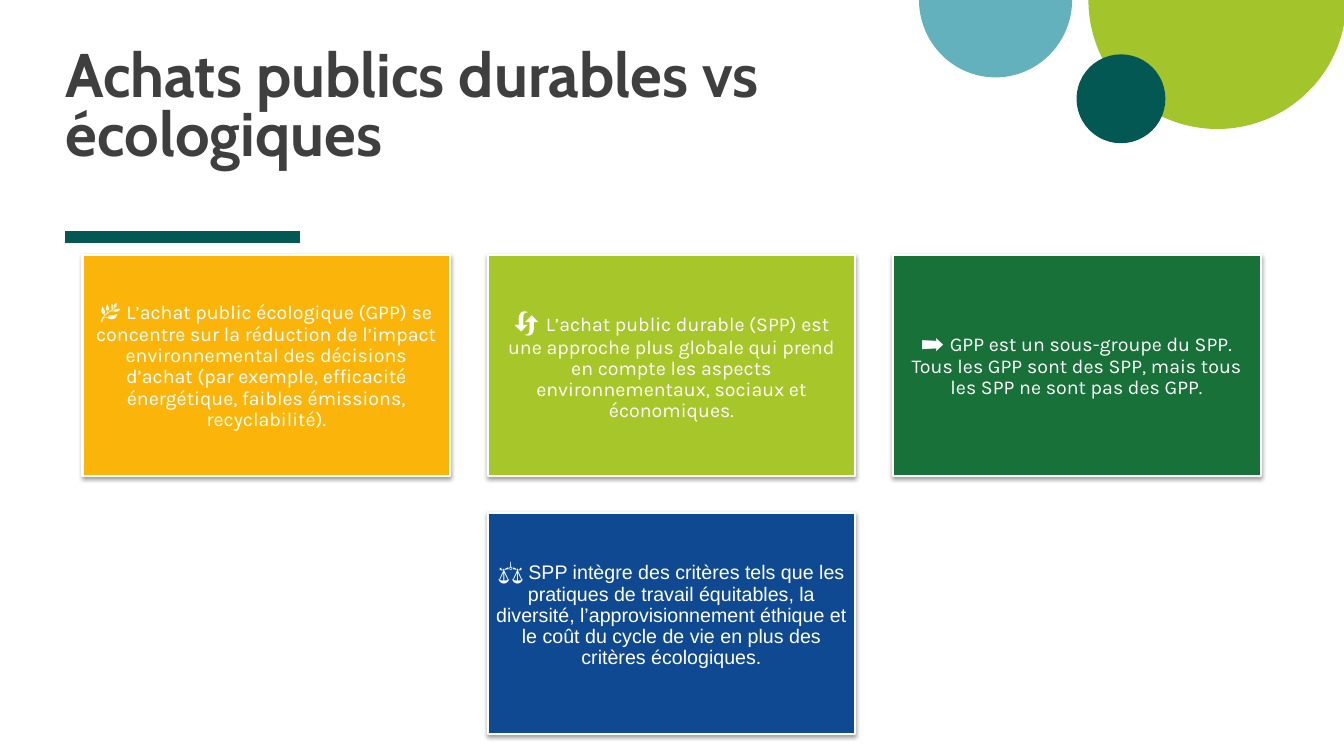
from lxml import etree
from pptx import Presentation
from pptx.dml.color import RGBColor
from pptx.enum import shapes, text
from pptx.oxml import parse_xml
from pptx.oxml.ns import qn
from pptx.util import Cm, Pt

WHITE = RGBColor(0xFF, 0xFF, 0xFF)
GREY = RGBColor(0x3F, 0x3F, 0x3F)
TEAL = RGBColor(0x03, 0x58, 0x54)
LEAF = RGBColor(0xA3, 0xC4, 0x2A)
AQUA = RGBColor(0x64, 0xB1, 0xBE)
AMBER = RGBColor(0xFB, 0xB5, 0x0A)
LIME = RGBColor(0xA6, 0xC6, 0x2A)
GREEN = RGBColor(0x18, 0x71, 0x38)
BLUE = RGBColor(0x0F, 0x49, 0x91)

TITLE = "Achats publics durables vs écologiques"
# column, row, fill, icon, icon size, text, font, bottom inset (cm)
CARDS = [
    (0, 0, AMBER, "🌿 ", 16,
     "L’achat public écologique (GPP) se concentre sur la réduction de l’impact "
     "environnemental des décisions d’achat (par exemple, efficacité énergétique, "
     "faibles émissions, recyclabilité).", "Karla", 0.2),
    (1, 0, LIME, "🔄 ", 19,
     "L’achat public durable (SPP) est une approche plus globale qui prend en compte "
     "les aspects environnementaux, sociaux et économiques.", "Karla", 0.2),
    (2, 0, GREEN, "➡️ ", 16,
     "GPP est un sous-groupe du SPP. Tous les GPP sont des SPP, mais tous les SPP "
     "ne sont pas des GPP.", "Karla", 0.2),
    (1, 1, BLUE, "⚖️ ", 16,
     "SPP intègre des critères tels que les pratiques de travail équitables, la "
     "diversité, l’approvisionnement éthique et le coût du cycle de vie en plus des "
     "critères écologiques.", "Arial", 0.64),
]
# preset, left, top, width, height (cm), fill
CIRCLES = [
    (shapes.MSO_SHAPE.PIE, 27.43, -3.25, 6.5, 6.5, LEAF),
    (shapes.MSO_SHAPE.PIE, 23.16, -1.96, 3.86, 3.91, AQUA),
    (shapes.MSO_SHAPE.OVAL, 27.13, 1.37, 2.24, 2.24, TEAL),
]
LEFT, TOP = 2.08, 6.43
CARD_W, CARD_H = 9.27, 5.56
STEP_X, STEP_Y = 10.21, 6.5
HALF_TURN = 108  # 180 degrees in the units of the pie adjustment
SHADOW = (
    '<a:effectLst xmlns:a="http://schemas.openxmlformats.org/drawingml/2006/main">'
    '<a:outerShdw blurRad="40000" dist="20000" dir="5400000" rotWithShape="0">'
    '<a:srgbClr val="000000"><a:alpha val="37000"/></a:srgbClr>'
    '</a:outerShdw></a:effectLst>')


def add_filled(slide, preset, left, top, width, height, fill):
    sp = slide.shapes.add_shape(preset, Cm(left), Cm(top), Cm(width), Cm(height))
    sp.fill.solid()
    sp.fill.fore_color.rgb = fill
    return sp


def add_circle(slide, preset, *place_and_fill):
    sp = add_filled(slide, preset, *place_and_fill)
    sp.shadow.inherit = False
    sp.line.fill.background()
    if preset == shapes.MSO_SHAPE.PIE:
        sp.adjustments[0] = 0
        sp.adjustments[1] = HALF_TURN


def add_rule(slide):
    line = slide.shapes.add_connector(
        shapes.MSO_CONNECTOR.STRAIGHT, Cm(1.65), Cm(5.97), Cm(7.57), Cm(5.97))
    line.line.color.rgb = TEAL
    line.line.width = Pt(8)
    etree.SubElement(line._element.spPr, qn("a:effectLst"))


def set_title(slide):
    title = slide.shapes.title
    title.left, title.top, title.width, title.height = Cm(1.65), Cm(0.56), Cm(23.57), Cm(4.37)
    tf = title.text_frame
    tf.text = TITLE
    tf.word_wrap = True
    tf.auto_size = text.MSO_AUTO_SIZE.NONE
    tf.vertical_anchor = text.MSO_ANCHOR.MIDDLE
    tf.margin_left = tf.margin_right = tf.margin_top = tf.margin_bottom = 0
    p = tf.paragraphs[0]
    p.alignment = text.PP_ALIGN.LEFT
    p.line_spacing = 0.8
    p.font.name, p.font.size, p.font.bold = "Cabin", Pt(44), True
    p.font.color.rgb = GREY


def add_card(slide, col, row, fill, icon, icon_size, body, font, bottom):
    sp = add_filled(slide, shapes.MSO_SHAPE.RECTANGLE, LEFT + col * STEP_X,
                    TOP + row * STEP_Y, CARD_W, CARD_H, fill)
    sp.line.color.rgb = WHITE
    sp.line.width = Pt(1.5)
    sp._element.spPr.append(parse_xml(SHADOW))
    tf = sp.text_frame
    tf.word_wrap = True
    tf.vertical_anchor = text.MSO_ANCHOR.MIDDLE
    tf.margin_left = tf.margin_right = tf.margin_top = Cm(0.2)
    tf.margin_bottom = Cm(bottom)
    p = tf.paragraphs[0]
    p.alignment = text.PP_ALIGN.CENTER
    p.line_spacing = 0.9
    for words, size, name in ((icon, icon_size, "Karla"), (body, 14, font)):
        r = p.add_run()
        r.text = words
        r.font.name, r.font.size = name, Pt(size)
        r.font.color.rgb = WHITE


def main():
    prs = Presentation()
    prs.slide_width, prs.slide_height = Cm(33.87), Cm(19.05)
    slide = prs.slides.add_slide(prs.slide_layouts[5])
    set_title(slide)
    add_rule(slide)
    for circle in CIRCLES:
        add_circle(slide, *circle)
    for card in CARDS:
        add_card(slide, *card)
    prs.save("out.pptx")


if __name__ == "__main__":
    main()
